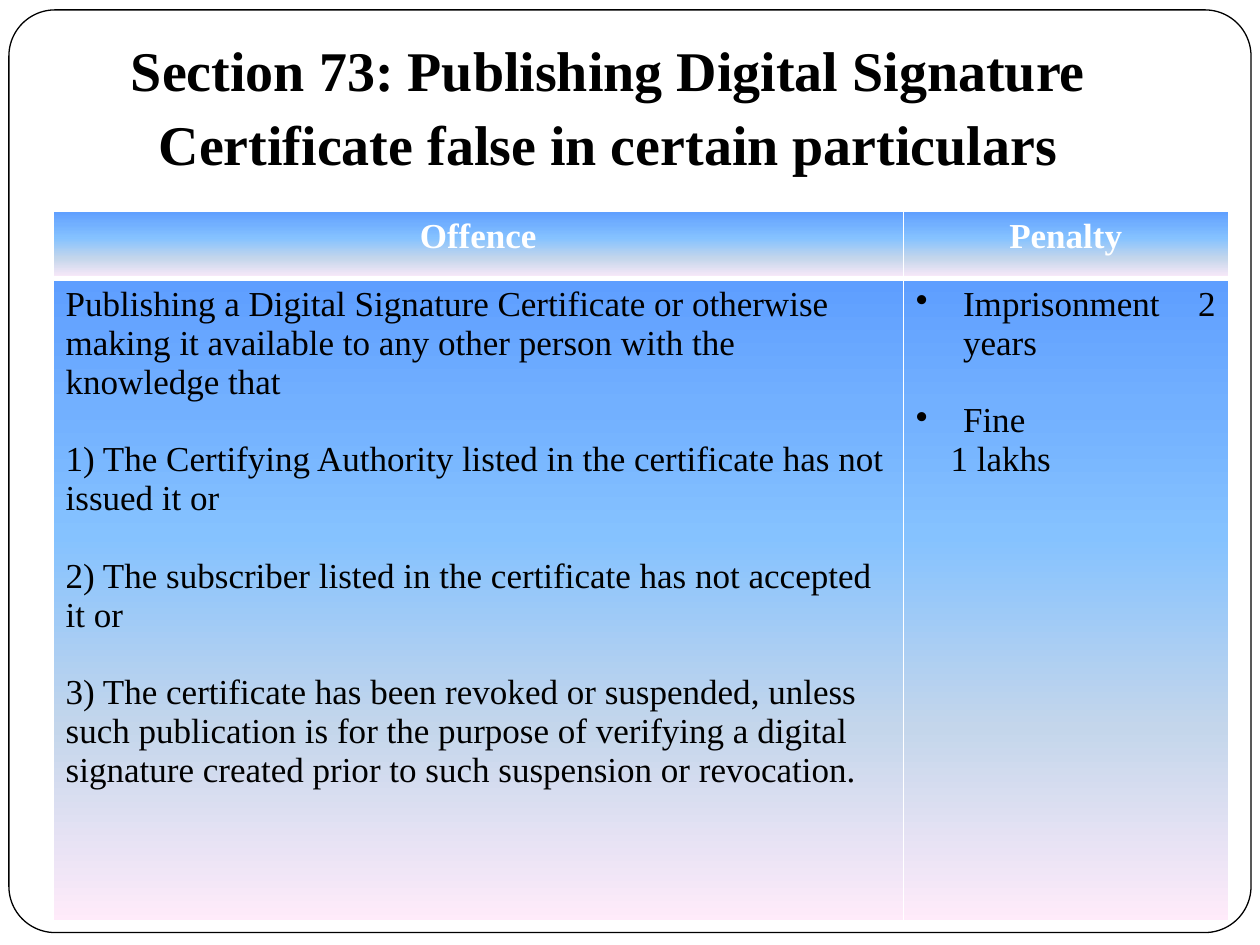
"""Builds the slide on Section 73, its offence and its penalty."""
from lxml import etree
from pptx import Presentation
from pptx.dml.color import RGBColor
from pptx.enum.shapes import MSO_SHAPE
from pptx.enum.text import MSO_ANCHOR, PP_ALIGN
from pptx.oxml.ns import qn
from pptx.util import Cm, Pt

ROUND = MSO_SHAPE.ROUNDED_RECTANGLE
BOTTOM = MSO_ANCHOR.BOTTOM
LEFT, CENTER, JUSTIFY = PP_ALIGN.LEFT, PP_ALIGN.CENTER, PP_ALIGN.JUSTIFY

BLACK = RGBColor(0x00, 0x00, 0x00)
WHITE = RGBColor(0xFF, 0xFF, 0xFF)
STOPS = (
    (0, RGBColor(0x5E, 0x9E, 0xFF)),
    (20, RGBColor(0x72, 0xB0, 0xFF)),
    (40, RGBColor(0x85, 0xC2, 0xFF)),
    (70, RGBColor(0xC4, 0xD6, 0xEB)),
    (100, RGBColor(0xFF, 0xEB, 0xFA)),
)

TITLE = "Section 73: Publishing Digital Signature Certificate false in certain particulars"
HEADS = ("Offence", "Penalty")
OFFENCE = (
    "Publishing a Digital Signature Certificate or otherwise making it available "
    "to any other person with the knowledge that",
    "1) The Certifying Authority listed in the certificate has not issued it or",
    "2) The subscriber listed in the certificate has not accepted it or",
    "3) The certificate has been revoked or suspended, unless such publication is "
    "for the purpose of verifying a digital signature created prior to such "
    "suspension or revocation.",
)
PENALTY = ("Imprisonment 2 years", "Fine", "1 lakhs")


def add(parent, tag, **attrs):
    return etree.SubElement(parent, qn(tag), {k: str(v) for k, v in attrs.items()})


def tint(parent, color):
    add(add(parent, "a:solidFill"), "a:srgbClr", val=color)


class Page:
    font = "Times New Roman"
    size = Pt(20)
    gap = Pt(22.2)

    def __init__(self, slide):
        self.slide = slide

    def frame(self, x, y, w, h):
        shape = self.slide.shapes.add_shape(ROUND, x, y, w, h)
        shape.adjustments[0] = 0.05
        shape.shadow.inherit = False
        shape.fill.solid()
        shape.fill.fore_color.rgb = WHITE
        shape.line.color.rgb = BLACK
        shape.line.width = Pt(0.75)

    def style(self, para, color=BLACK, bold=False, size=None, align=LEFT):
        para.alignment = align
        for run in para.runs:
            font = run.font
            font.name, font.size, font.bold = self.font, size or self.size, bold
            font.color.rgb = color

    def title(self, text, x, y, w, h):
        frame = self.slide.shapes.add_textbox(x, y, w, h).text_frame
        frame.word_wrap = True
        frame.vertical_anchor = BOTTOM
        frame.margin_bottom = Cm(0.25)
        frame.text = text
        para = frame.paragraphs[0]
        para.line_spacing = 1.1
        self.style(para, bold=True, size=Pt(32), align=CENTER)

    def table(self, x, y, cols, rows):
        table = self.slide.shapes.add_table(
            len(rows), len(cols), x, y, sum(cols), sum(rows)
        ).table
        for col, width in zip(table.columns, cols):
            col.width = width
        for row, height in zip(table.rows, rows):
            row.height = height
        return table

    def cell(self, cell, lines, top=1, base=1):
        props = cell._tc.get_or_add_tcPr()
        for side, width in (("L", 1), ("R", 1), ("T", top), ("B", base)):
            tint(add(props, f"a:ln{side}", w=Pt(width)), WHITE)
        grad = add(props, "a:gradFill", rotWithShape=1)
        stops = add(grad, "a:gsLst")
        for place, color in STOPS:
            add(add(stops, "a:gs", pos=place * 1000), "a:srgbClr", val=color)
        add(grad, "a:lin", ang=90 * 60000, scaled=0)
        cell.text_frame.text = "\n".join(lines)
        return cell.text_frame.paragraphs

    def bullet(self, para):
        props = para._p.get_or_add_pPr()
        props.set("marL", str(Cm(0.95)))
        props.set("indent", str(-Cm(0.95)))
        add(add(props, "a:buClr"), "a:srgbClr", val=BLACK)
        add(props, "a:buChar", char="•")


def main():
    deck = Presentation()
    deck.slide_width, deck.slide_height = Cm(25.4), Cm(19.05)
    page = Page(deck.slides.add_slide(deck.slide_layouts[6]))
    page.frame(Cm(0.18), Cm(0.2), Cm(25.04), Cm(18.6))
    page.title(TITLE, Cm(0.84), Cm(1.12), Cm(22.86), Cm(2.7))

    table = page.table(Cm(1.07), Cm(4.25), (Cm(17.14), Cm(6.55)), (Cm(1.37), Cm(12.95)))
    for col, head in enumerate(HEADS):
        para = page.cell(table.cell(0, col), [head], base=3)[0]
        page.style(para, WHITE, bold=True, align=CENTER)

    paras = page.cell(table.cell(1, 0), OFFENCE, top=3)
    for para in paras:
        page.style(para)
    for para in paras[1:]:
        para.space_before = page.gap

    term, fine, sum_ = page.cell(table.cell(1, 1), PENALTY, top=3)
    page.style(term, align=JUSTIFY)
    page.style(fine)
    page.style(sum_)
    fine.space_before = page.gap
    page.bullet(term)
    page.bullet(fine)
    sum_._p.get_or_add_pPr().set("marL", str(Cm(0.7)))

    deck.save("out.pptx")


if __name__ == "__main__":
    main()
